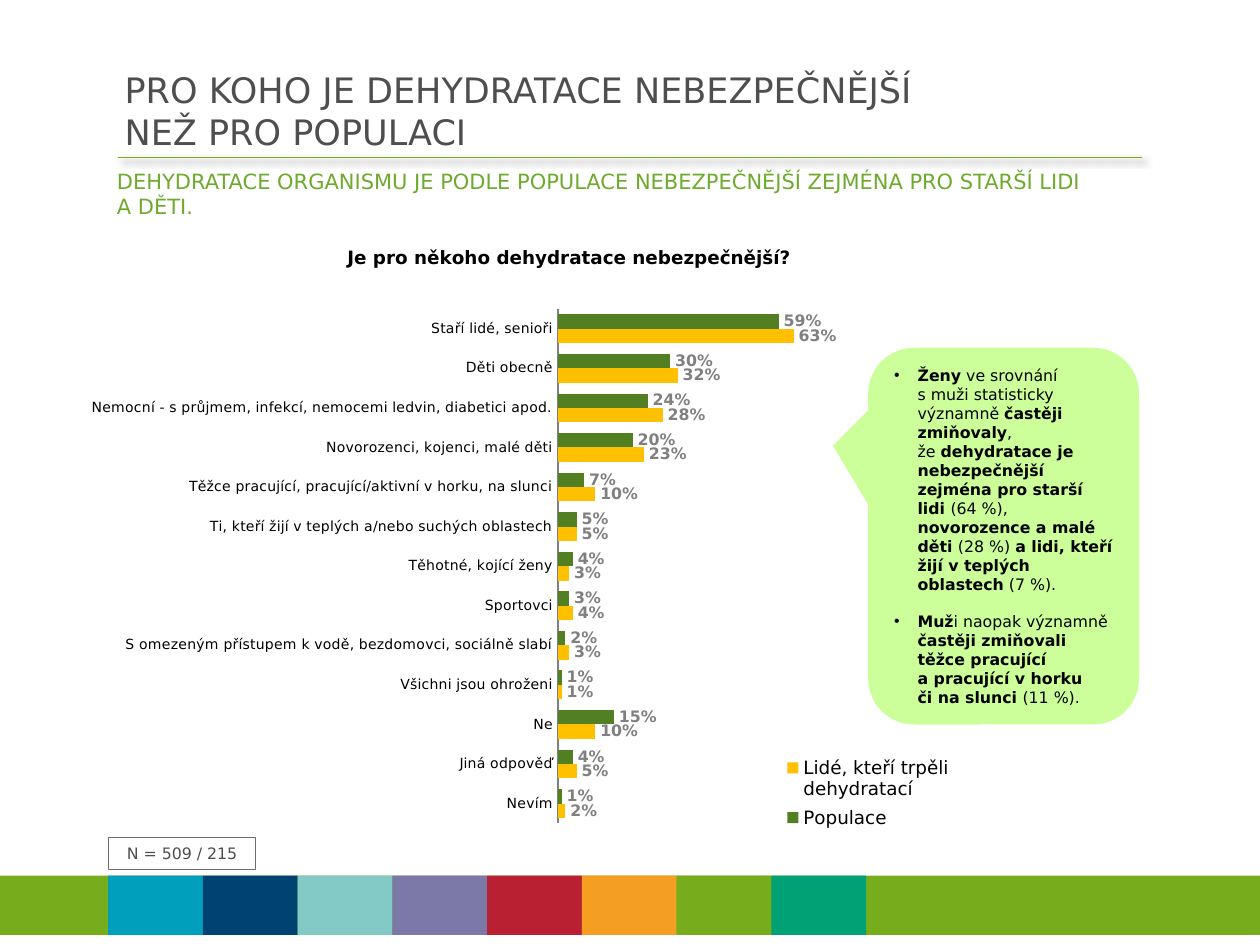
from lxml.etree import SubElement
from pptx import Presentation
from pptx.chart.data import CategoryChartData
from pptx.dml.color import RGBColor
from pptx.enum.chart import XL_CHART_TYPE as ChartType, XL_LABEL_POSITION as LabelPos
from pptx.enum.chart import XL_LEGEND_POSITION as LegendPos, XL_TICK_MARK as TickMark
from pptx.enum.shapes import MSO_CONNECTOR as Connector, MSO_SHAPE as Shape
from pptx.enum.text import MSO_ANCHOR as Anchor, MSO_AUTO_SIZE as AutoSize, PP_ALIGN as Align
from pptx.oxml import parse_xml
from pptx.oxml.ns import nsdecls, qn
from pptx.util import Pt

FONT = "DejaVu Sans"
COLORS = {
    "strip": "77AD1C", "title": "4E4E4E", "subtitle": "6EAA2E", "text": "000000",
    "callout": "CCFF99", "frame": "6E6E6E", "label": "808080",
    "population": "527F22", "dehydrated": "FFC000",
}
TILES = ["009FBB", "004272", "83C9C6", "7C78A8", "B92032", "F49F22", "77AD1C", "00A275"]
ANSWERS = [
    ("Staří lidé, senioři", 0.59, 0.63),
    ("Děti obecně", 0.30, 0.32),
    ("Nemocní - s průjmem, infekcí, nemocemi ledvin, diabetici apod.", 0.24, 0.28),
    ("Novorozenci, kojenci, malé děti", 0.20, 0.23),
    ("Těžce pracující, pracující/aktivní v horku, na slunci", 0.07, 0.10),
    ("Ti, kteří žijí v teplých a/nebo suchých oblastech", 0.05, 0.05),
    ("Těhotné, kojící ženy", 0.04, 0.03),
    ("Sportovci", 0.03, 0.04),
    ("S omezeným přístupem k vodě, bezdomovci, sociálně slabí", 0.02, 0.03),
    ("Všichni jsou ohroženi", 0.01, 0.01),
    ("Ne", 0.15, 0.10),
    ("Jiná odpověď", 0.04, 0.05),
    ("Nevím", 0.01, 0.02),
]
# Each finding alternates bold and regular pieces, starting with bold.
FINDINGS = [
    ["Ženy", " ve srovnání \ns muži statisticky významně ", "častěji zmiňovaly", ", \nže ",
     "dehydratace je nebezpečnější zejména pro starší lidi ", "(64 %), ",
     "novorozence a malé děti ", "(28 %) ", "a lidi, kteří žijí v teplých oblastech",
     " (7 %)."],
    ["Muž", "i naopak významně ",
     "častěji zmiňovali těžce pracující \na pracující v horku \nči na slunci ", "(11 %)."],
]


def rgb(name):
    return RGBColor.from_string(COLORS.get(name, name))


def box(left, top, width, height):
    return Pt(left), Pt(top), Pt(width), Pt(height)


def style(font, size, color="text", bold=False):
    for attribute, value in {"name": FONT, "size": Pt(size), "bold": bold}.items():
        setattr(font, attribute, value)
    font.color.rgb = rgb(color)


def write(paragraph, text, size, color="text", bold=False):
    """Append text; each newline becomes a line break in the paragraph."""
    for number, line in enumerate(text.split("\n")):
        if number:
            paragraph.add_line_break()
        run = paragraph.add_run()
        run.text = line
        style(run.font, size, color, bold)


def add_block(slide, kind, bounds, fill=None, line=None):
    block = slide.shapes.add_shape(kind, *box(*bounds))
    block.shadow.inherit = False
    if fill:
        block.fill.solid()
        block.fill.fore_color.rgb = rgb(fill)
    else:
        block.fill.background()
    if line:
        block.line.color.rgb = rgb(line)
        block.line.width = Pt(0.75)
    else:
        block.line.fill.background()
    return block


def add_strip(slide):
    top, height, first, width = 500.4, 33.84, 61.8, 54.14
    add_block(slide, Shape.RECTANGLE, (0, top, 720, height), "strip")
    for number, color in enumerate(TILES):
        add_block(slide, Shape.RECTANGLE, (first + number * width, top, width, height), color)


def add_title_rule(slide):
    rule = slide.shapes.add_connector(Connector.STRAIGHT, Pt(67.68), Pt(90), Pt(652.32), Pt(90))
    rule.line.color.rgb = rgb("strip")
    rule.line.width = Pt(0.75)
    effects = SubElement(rule._element.spPr, qn("a:effectLst"))
    shadow = SubElement(effects, qn("a:outerShdw"), blurRad=str(Pt(4)), dist=str(Pt(3)),
                        dir="2700000", algn="tl", rotWithShape="0")
    shade = SubElement(shadow, qn("a:srgbClr"), val=COLORS["text"])
    SubElement(shade, qn("a:alpha"), val="40000")


def set_title(slide, text):
    title = slide.shapes.title
    title.left, title.top, title.width, title.height = box(64, 44.64, 638.64, 36.72)
    frame = title.text_frame
    frame.auto_size = AutoSize.NONE
    frame.vertical_anchor = Anchor.MIDDLE
    paragraph = frame.paragraphs[0]
    paragraph.alignment = Align.LEFT
    paragraph.space_after = Pt(3)
    write(paragraph, text, 20, "title")


def add_subtitle(slide, text):
    frame = slide.shapes.add_textbox(*box(59.76, 92.88, 601.2, 39.6)).text_frame
    frame.word_wrap = True
    write(frame.paragraphs[0], text, 12, "subtitle")


def place(element, index, **fractions):
    """Give a chart part a fixed place, in fractions of the chart area."""
    for layout in element.findall(qn("c:layout")):
        element.remove(layout)
    layout = parse_xml(f"<c:layout {nsdecls('c')}><c:manualLayout/></c:layout>")
    if "w" in fractions and index == 0:
        SubElement(layout[0], qn("c:layoutTarget"), val="inner")
    for side in ("x", "y"):
        SubElement(layout[0], qn(f"c:{side}Mode"), val="edge")
    for key, value in fractions.items():
        SubElement(layout[0], qn(f"c:{key}"), val=str(value))
    element.insert(index, layout)


def add_answer_chart(slide):
    names, population, dehydrated = zip(*ANSWERS)
    data = CategoryChartData(number_format="0%")
    data.categories = names
    data.add_series("Populace", population)
    data.add_series("Lidé, kteří trpěli dehydratací", dehydrated)
    chart = slide.shapes.add_chart(
        ChartType.BAR_CLUSTERED, *box(-54, 134.64, 611.28, 349.92), data).chart
    style(chart.font, 18)

    write(chart.chart_title.text_frame.paragraphs[0],
          "Je pro někoho dehydratace nebezpečnější?", 10.5, bold=True)
    chart.chart_title.include_in_layout = False
    place(chart.chart_title._element, 1, x=0.41, y=0.01)

    chart.has_legend = True
    chart.legend.position = LegendPos.RIGHT
    chart.legend.include_in_layout = False
    style(chart.legend.font, 10.5)
    place(chart.legend._element, 1, x=0.8, y=0.84, w=0.2, h=0.14)

    answers, shares = chart.category_axis, chart.value_axis
    answers.reverse_order = True
    answers.major_tick_mark = TickMark.NONE
    answers.format.line.color.rgb = rgb("label")
    style(answers.tick_labels.font, 8)
    shares.visible = False
    shares.has_major_gridlines = False
    shares.minimum_scale, shares.maximum_scale = 0, 1

    plot = chart.plots[0]
    plot.gap_width, plot.overlap, plot.vary_by_categories = 75, 0, False
    for series, color in zip(plot.series, ("population", "dehydrated")):
        series.format.fill.solid()
        series.format.fill.fore_color.rgb = rgb(color)
        labels = series.data_labels
        for attribute, value in {"show_value": True, "number_format": "0%",
                                 "number_format_is_linked": False,
                                 "position": LabelPos.OUTSIDE_END}.items():
            setattr(labels, attribute, value)
        style(labels.font, 9, "label", True)
    place(chart._chartSpace.chart.plotArea, 0, x=0.61, y=0.12, w=0.35, h=0.84)


def add_findings(slide):
    callout = add_block(slide, Shape.ROUNDED_RECTANGULAR_CALLOUT,
                        (496.08, 198.72, 154.8, 215.28), "callout")
    for number, value in enumerate((-0.63, -0.24, 0.17)):
        callout.adjustments[number] = value
    frame = callout.text_frame
    frame.word_wrap = True
    frame.vertical_anchor = Anchor.MIDDLE
    for number, pieces in enumerate(FINDINGS):
        paragraph = frame.add_paragraph() if number else frame.paragraphs[0]
        paragraph.alignment = Align.LEFT
        if number:
            paragraph.space_before = Pt(10.5)
        properties = paragraph._p.get_or_add_pPr()
        properties.set("marL", str(Pt(13.5)))
        properties.set("indent", str(Pt(-13.5)))
        SubElement(properties, qn("a:buFont"), typeface="Arial")
        SubElement(properties, qn("a:buChar"), char="•")
        for position, piece in enumerate(pieces):
            write(paragraph, piece, 9, bold=position % 2 == 0)


def add_sample_size(slide, text):
    frame = add_block(slide, Shape.RECTANGLE, (61.92, 478.6, 84.24, 18.2), line="frame").text_frame
    frame.vertical_anchor = Anchor.TOP
    frame.paragraphs[0].alignment = Align.CENTER
    write(frame.paragraphs[0], text, 9, "title")


def main():
    deck = Presentation()
    deck.slide_width, deck.slide_height = Pt(720), Pt(540)
    slide = deck.slides.add_slide(deck.slide_layouts[5])
    add_title_rule(slide)
    add_strip(slide)
    add_answer_chart(slide)
    set_title(slide, "PRO KOHO JE DEHYDRATACE NEBEZPEČNĚJŠÍ \nNEŽ PRO POPULACI")
    add_subtitle(slide, "DEHYDRATACE ORGANISMU JE PODLE POPULACE NEBEZPEČNĚJŠÍ "
                        "ZEJMÉNA PRO STARŠÍ LIDI \nA DĚTI.")
    add_findings(slide)
    add_sample_size(slide, "N = 509 / 215")
    deck.save("out.pptx")


if __name__ == "__main__":
    main()
